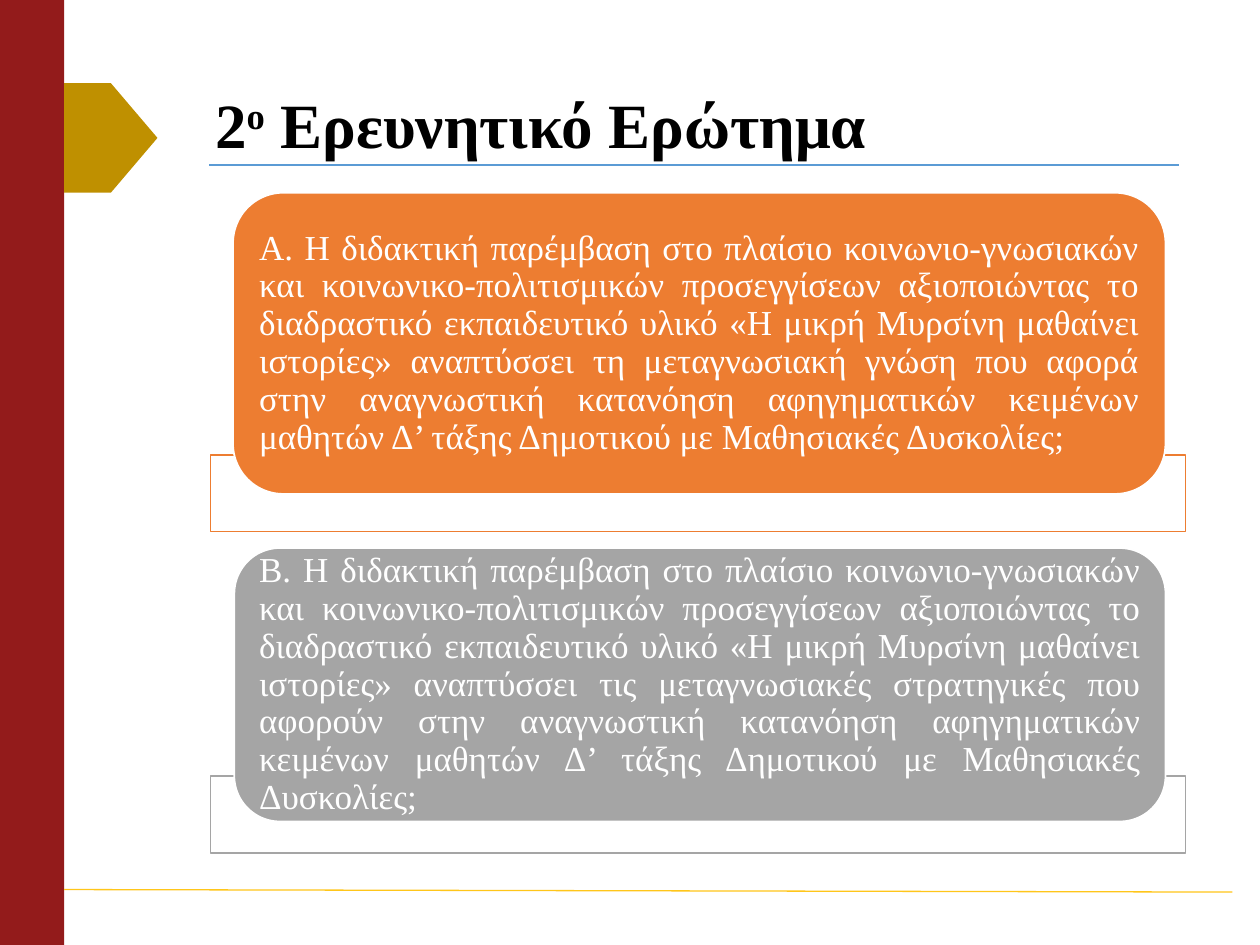
import pptx
import pptx.util
import pptx.dml.color
import pptx.enum.shapes
import pptx.enum.text
import pptx.oxml.ns
from dataclasses import dataclass
from lxml import etree

Inches = pptx.util.Inches
Pt = pptx.util.Pt
Shape = pptx.enum.shapes.MSO_SHAPE
Align = pptx.enum.text.PP_ALIGN
Anchor = pptx.enum.text.MSO_ANCHOR
qn = pptx.oxml.ns.qn


@dataclass(frozen=True)
class Theme:
    font: str = "Times New Roman"
    title: int = 36
    body: int = 20
    black: str = "000000"
    white: str = "FFFFFF"
    red: str = "931B1B"
    gold: str = "BF9000"
    amber: str = "FFC61A"
    blue: str = "5B9BD5"
    orange: str = "ED7D31"
    gray: str = "A5A5A5"


def rgb(code):
    return pptx.dml.color.RGBColor.from_string(code)


class Deck:
    def __init__(self, theme):
        self.theme = theme
        self.file = pptx.Presentation()
        self.file.slide_width = Inches(10)
        self.file.slide_height = Inches(7.5)
        self.slide = self.file.slides.add_slide(self.file.slide_layouts[6])

    def shape(self, kind, box, fill, line=None):
        item = self.slide.shapes.add_shape(kind, *map(Inches, box))
        item.shadow.inherit = False
        item.fill.solid()
        item.fill.fore_color.rgb = rgb(fill)
        if line:
            item.line.color.rgb = rgb(line)
            item.line.width = Pt(1)
        else:
            item.line.fill.background()
        return item

    def rule(self, start, end, color):
        item = self.slide.shapes.add_connector(
            pptx.enum.shapes.MSO_CONNECTOR.STRAIGHT,
            *map(Inches, start + end))
        item.line.color.rgb = rgb(color)
        item.line.width = Pt(0.75)
        etree.SubElement(item._element.spPr, qn("a:effectLst"))

    def style(self, para, size, color, bold=False):
        para.line_spacing = 0.9
        para.font.name = self.theme.font
        para.font.size = Pt(size)
        para.font.bold = bold
        para.font.color.rgb = rgb(color)

    def title(self, box, base, power, rest):
        item = self.slide.shapes.add_textbox(*map(Inches, box))
        frame = item.text_frame
        frame.word_wrap = True
        frame.vertical_anchor = Anchor.MIDDLE
        para = frame.paragraphs[0]
        for text in (base, power, rest):
            run = para.add_run()
            run.text = text
            if text == power:
                run._r.get_or_add_rPr().set("baseline", "30000")
        self.style(para, self.theme.title, self.theme.black, True)

    def card(self, box, base, color, text):
        # Outlined bar behind the card
        self.shape(Shape.RECTANGLE, (1.67, base, 7.74, 0.61),
                   self.theme.white, color)
        item = self.shape(Shape.ROUNDED_RECTANGLE, box, color,
                          self.theme.white)
        frame = item.text_frame
        frame.word_wrap = True
        frame.vertical_anchor = Anchor.MIDDLE
        # The rounded corners already inset the text a little
        frame.margin_left = frame.margin_right = Inches(0.09)
        frame.margin_top = frame.margin_bottom = 0
        para = frame.paragraphs[0]
        para.text = text
        para.alignment = Align.JUSTIFY
        self.style(para, self.theme.body, self.theme.white)


def main():
    theme = Theme()
    deck = Deck(theme)

    # Side band, tab and rules
    deck.shape(Shape.RECTANGLE, (0, 0, 0.51, 7.5), theme.red)
    deck.rule((1.66, 1.31), (9.36, 1.31), theme.blue)
    deck.rule((0.51, 7.06), (9.78, 7.08), theme.amber)
    deck.shape(Shape.PENTAGON, (0.51, 0.66, 0.74, 0.87), theme.gold)

    # Title
    deck.title((1.61, 0.6, 7.87, 0.84), "2", "ο", " Ερευνητικό Ερώτημα")

    # Research questions
    lead = ("Η διδακτική παρέμβαση στο πλαίσιο κοινωνιο-γνωσιακών και "
            "κοινωνικο-πολιτισμικών προσεγγίσεων αξιοποιώντας το "
            "διαδραστικό εκπαιδευτικό υλικό «Η μικρή Μυρσίνη μαθαίνει "
            "ιστορίες» αναπτύσσει")
    tail = ("στην αναγνωστική κατανόηση αφηγηματικών κειμένων μαθητών "
            "Δ’ τάξης Δημοτικού με Μαθησιακές Δυσκολίες;")
    cards = (
        ("Α.", "τη μεταγνωσιακή γνώση που αφορά",
         (1.85, 1.53, 7.4, 2.39), 3.61, theme.orange),
        ("Β.", "τις μεταγνωσιακές στρατηγικές που αφορούν",
         (1.86, 4.35, 7.39, 2.17), 6.16, theme.gray),
    )
    for mark, topic, box, base, color in cards:
        deck.card(box, base, color, f"{mark} {lead} {topic} {tail}")

    deck.file.save("out.pptx")


if __name__ == "__main__":
    main()
